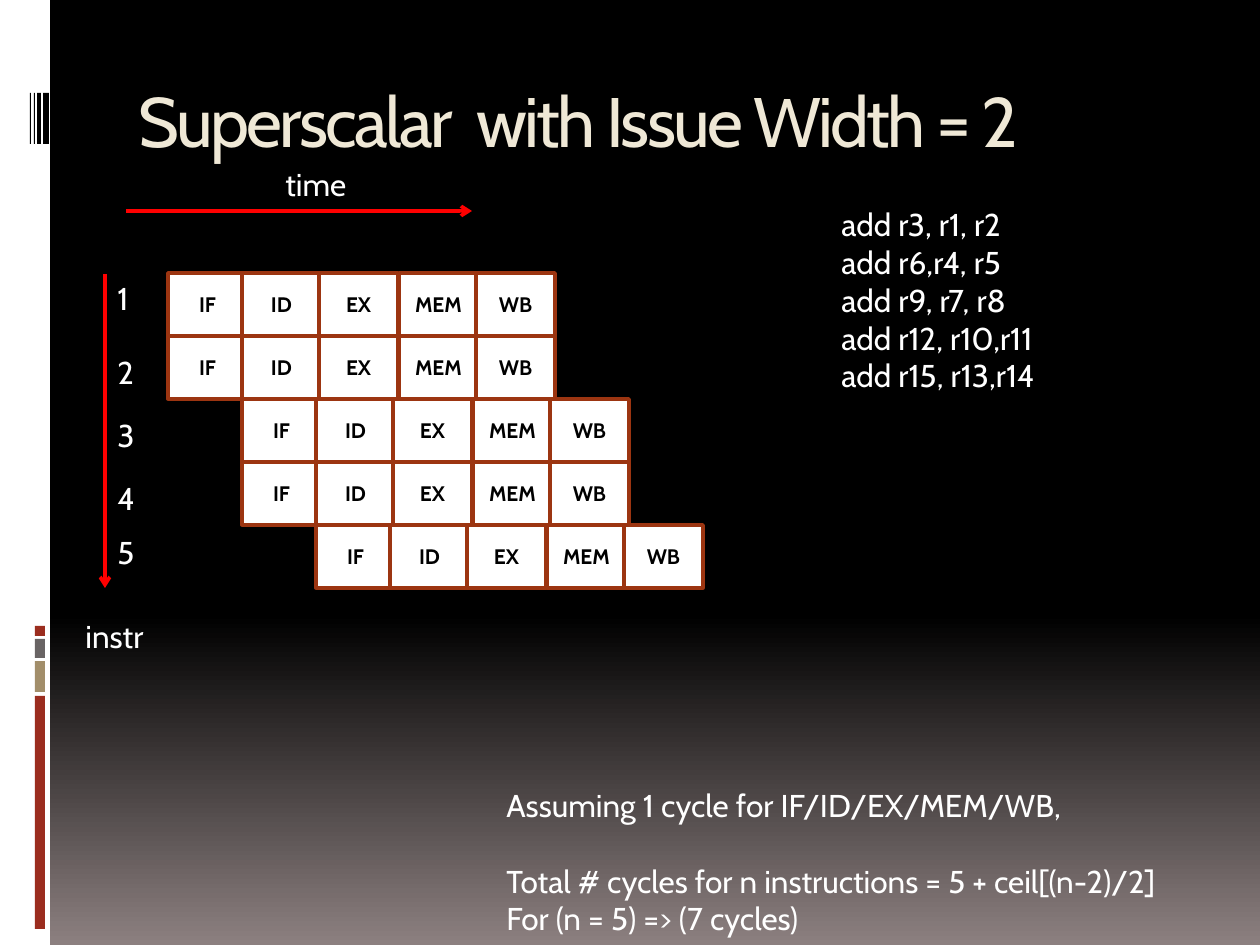
from dataclasses import dataclass

from lxml import etree
from pptx import Presentation
from pptx import util as u
from pptx.dml.color import RGBColor
from pptx.enum import shapes, text
from pptx.oxml import ns

SCALE = 914400 / 126


@dataclass(frozen=True)
class Theme:
    font: str = "Cabin"
    black: str = "000000"
    white: str = "FFFFFF"
    fade: str = "8C8080"
    cream: str = "EFE8D6"
    brick: str = "9B2D1F"
    sand: str = "A28E6A"
    gray: str = "696464"
    edge: str = "9C3511"
    red: str = "FF0000"
    head: int = 40
    body: int = 18
    cell: int = 12
    line: int = 2


@dataclass(frozen=True)
class Box:
    x: int
    y: int
    w: int
    h: int


@dataclass(frozen=True)
class Bar:
    box: Box
    color: str


@dataclass(frozen=True)
class Label:
    words: str
    box: Box
    wrap: bool = False


@dataclass(frozen=True)
class Arrow:
    x1: int
    y1: int
    x2: int
    y2: int


T = Theme()

BARS = [
    Bar(Box(0, 0, 50, 945), T.white),
    Bar(Box(35, 696, 10, 233), T.brick),
    Bar(Box(35, 661, 10, 31), T.sand),
    Bar(Box(35, 639, 10, 19), T.gray),
    Bar(Box(35, 626, 10, 10), T.brick),
] + [Bar(Box(x, 93, w, 51), T.black) for x, w in ((43, 6), (37, 4), (34, 1), (30, 1))]

TITLE = Label("Superscalar  with Issue Width = 2", Box(126, 71, 1071, 126), True)
NOTE = Label(
    "Assuming 1 cycle for IF/ID/EX/MEM/WB,\n"
    "Total # cycles for n instructions = 5 + ceil[(n-2)/2]\n"
    "For (n = 5) => (7 cycles)",
    Box(494, 780, 703, 165), True)
CODE = Label(
    "add r3, r1, r2\nadd r6,r4, r5\nadd r9, r7, r8\n"
    "add r12, r10,r11\nadd r15, r13,r14",
    Box(829, 199, 227, 204))
AXES = [Label("instr", Box(73, 611, 84, 50)), Label("time", Box(273, 159, 86, 50))]
ARROWS = [Arrow(105, 274, 105, 588), Arrow(126, 211, 472, 211)]

ROWS = (273, 347, 410, 473, 527)
STAGES = {"IF": 0, "ID": 74, "EX": 151, "MEM": 231, "WB": 308}
LEFT, TOP, SHIFT, WIDE, TALL = 168, 273, 74, 79, 63
ISSUE = 2


def px(n: int) -> u.Emu:
    return u.Emu(round(n * SCALE))


def place(box: Box) -> tuple:
    return px(box.x), px(box.y), px(box.w), px(box.h)


def style(frame, size: int, color: str, bold: bool = False) -> None:
    for para in frame.paragraphs:
        for run in para.runs:
            run.font.name = T.font
            run.font.size = u.Pt(size)
            run.font.bold = bold
            run.font.color.rgb = RGBColor.from_string(color)


def rect(slide, bar: Bar):
    shape = slide.shapes.add_shape(shapes.MSO_SHAPE.RECTANGLE, *place(bar.box))
    shape.shadow.inherit = False
    shape.fill.solid()
    shape.fill.fore_color.rgb = RGBColor.from_string(bar.color)
    shape.line.fill.background()
    return shape


def stage(slide, label: Label) -> None:
    shape = rect(slide, Bar(label.box, T.white))
    shape.line.color.rgb = RGBColor.from_string(T.edge)
    shape.line.width = u.Pt(T.line)
    frame = shape.text_frame
    frame.text = label.words
    frame.vertical_anchor = text.MSO_ANCHOR.MIDDLE
    frame.paragraphs[0].alignment = text.PP_ALIGN.CENTER
    style(frame, T.cell, T.black, True)


def write(slide, label: Label, size: int = T.body, color: str = T.white):
    frame = slide.shapes.add_textbox(*place(label.box)).text_frame
    frame.word_wrap = label.wrap
    frame.text = label.words
    style(frame, size, color)
    return frame


def point(slide, arrow: Arrow) -> None:
    line = slide.shapes.add_connector(
        shapes.MSO_CONNECTOR.STRAIGHT,
        px(arrow.x1), px(arrow.y1), px(arrow.x2), px(arrow.y2))
    line.line.color.rgb = RGBColor.from_string(T.red)
    line.line.width = u.Pt(T.line)
    props = line._element.spPr
    etree.SubElement(props.find(ns.qn("a:ln")), ns.qn("a:tailEnd"), type="arrow")
    etree.SubElement(props, ns.qn("a:effectLst"))


def paint(slide) -> None:
    fill = slide.background.fill
    fill.gradient()
    fill.gradient_angle = 270
    for stop, (pos, color) in zip(fill.gradient_stops, ((0.65, T.black), (1, T.fade))):
        stop.position = pos
        stop.color.rgb = RGBColor.from_string(color)


def main() -> None:
    deck = Presentation()
    deck.slide_width, deck.slide_height = px(1260), px(945)
    slide = deck.slides.add_slide(deck.slide_layouts[6])
    paint(slide)
    for bar in BARS:
        rect(slide, bar)
    title = write(slide, TITLE, T.head, T.cream)
    title.paragraphs[0].runs[0].font._element.set("spc", "-150")
    for arrow in ARROWS:
        point(slide, arrow)
    for label in AXES:
        write(slide, label)
    for i, y in enumerate(ROWS):
        write(slide, Label(str(i + 1), Box(105, y, 41, 50)))
        for name, dx in STAGES.items():
            x = LEFT + SHIFT * (i // ISSUE) + dx
            stage(slide, Label(name, Box(x, TOP + TALL * i, WIDE, TALL)))
    note = write(slide, NOTE)
    note.paragraphs[1].space_before = u.Pt(21.5)
    write(slide, CODE)
    deck.save("out.pptx")


if __name__ == "__main__":
    main()
